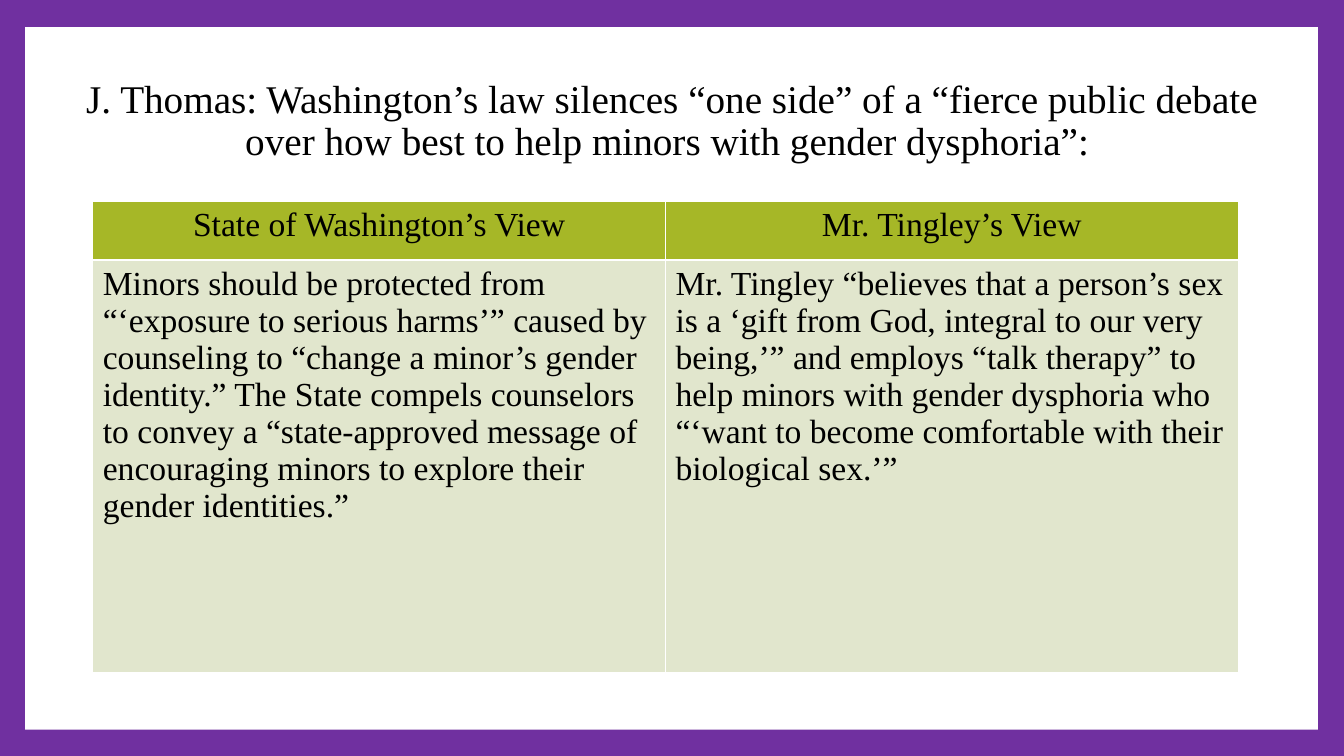
import pptx
import pptx.dml.color
import pptx.enum.shapes
import pptx.enum.text
import pptx.oxml
import pptx.util
from pptx.oxml.ns import nsdecls
from pptx.util import Inches

ALIGN = pptx.enum.text.PP_ALIGN
ANCHOR = pptx.enum.text.MSO_ANCHOR

TITLE = (
    "J. Thomas: Washington’s law silences “one side” of a “fierce public debate "
    "over how best to help minors with gender dysphoria”: "
)
VIEWS = [
    ("State of Washington’s View", "Mr. Tingley’s View"),
    (
        "Minors should be protected from “‘exposure to serious harms’” caused by "
        "counseling to “change a minor’s gender identity.” The State compels "
        "counselors to convey a “state-approved message of encouraging minors to "
        "explore their gender identities.”",
        "Mr. Tingley “believes that a person’s sex is a ‘gift from God, integral to "
        "our very being,’” and employs “talk therapy” to help minors with gender "
        "dysphoria who “‘want to become comfortable with their biological sex.’”",
    ),
]
ROW_FORMATS = [
    {"height": 0.58, "fill": "A6B727", "alignment": ALIGN.CENTER},
    {"height": 4.09, "fill": "E1E6CD", "alignment": ALIGN.LEFT},
]
COLUMN_WIDTH = 5.68
TABLE_LEFT, TABLE_TOP = 0.92, 2
PURPLE, WHITE, BLACK = "7030A0", "FFFFFF", "000000"


def color(hex_value):
    return pptx.dml.color.RGBColor.from_string(hex_value)


def fill_solid(fill, hex_value):
    fill.solid()
    fill.fore_color.rgb = color(hex_value)


def write(text_frame, text, size, **paragraph_format):
    paragraph = text_frame.paragraphs[0]
    for name, value in paragraph_format.items():
        setattr(paragraph, name, value)
    run = paragraph.add_run()
    run.text = text
    font_format = {"name": "Times New Roman", "size": pptx.util.Pt(size), "bold": False}
    for name, value in font_format.items():
        setattr(run.font, name, value)
    run.font.color.rgb = color(BLACK)


def add_borders(cell):
    """Put a thin white line on all four sides; lines must precede the fill."""
    properties = cell._tc.get_or_add_tcPr()
    for position, side in enumerate(("lnL", "lnR", "lnT", "lnB")):
        line = pptx.oxml.parse_xml(
            f'<a:{side} {nsdecls("a")} w="12700"><a:solidFill>'
            f'<a:srgbClr val="{WHITE}"/></a:solidFill></a:{side}>'
        )
        properties.insert(position, line)


def add_panel(slide):
    panel = slide.shapes.add_shape(
        pptx.enum.shapes.MSO_SHAPE.RECTANGLE,
        Inches(0.25), Inches(0.27), Inches(12.82), Inches(6.97),
    )
    panel.shadow.inherit = False
    fill_solid(panel.fill, WHITE)
    panel.line.fill.background()


def add_title(slide):
    title = slide.shapes.add_textbox(
        Inches(0.72), Inches(0.47), Inches(11.89), Inches(1.48)
    )
    frame_format = {"word_wrap": True, "vertical_anchor": ANCHOR.MIDDLE}
    for name, value in frame_format.items():
        setattr(title.text_frame, name, value)
    write(title.text_frame, TITLE, 28, alignment=ALIGN.CENTER, line_spacing=0.9)


def add_views_table(slide):
    column_count = len(VIEWS[0])
    table_height = sum(row_format["height"] for row_format in ROW_FORMATS)
    table = slide.shapes.add_table(
        len(VIEWS), column_count, Inches(TABLE_LEFT), Inches(TABLE_TOP),
        Inches(COLUMN_WIDTH * column_count), Inches(table_height),
    ).table
    table.horz_banding = False
    for column in table.columns:
        column.width = Inches(COLUMN_WIDTH)
    for row, texts, row_format in zip(table.rows, VIEWS, ROW_FORMATS):
        row.height = Inches(row_format["height"])
        for cell, text in zip(row.cells, texts):
            fill_solid(cell.fill, row_format["fill"])
            add_borders(cell)
            write(cell.text_frame, text, 24, alignment=row_format["alignment"])


def main():
    presentation = pptx.Presentation()
    presentation.slide_width = Inches(13.33)
    presentation.slide_height = Inches(7.5)
    slide = presentation.slides.add_slide(presentation.slide_layouts[6])
    fill_solid(slide.background.fill, PURPLE)
    add_panel(slide)
    add_title(slide)
    add_views_table(slide)
    presentation.save("out.pptx")


if __name__ == "__main__":
    main()
